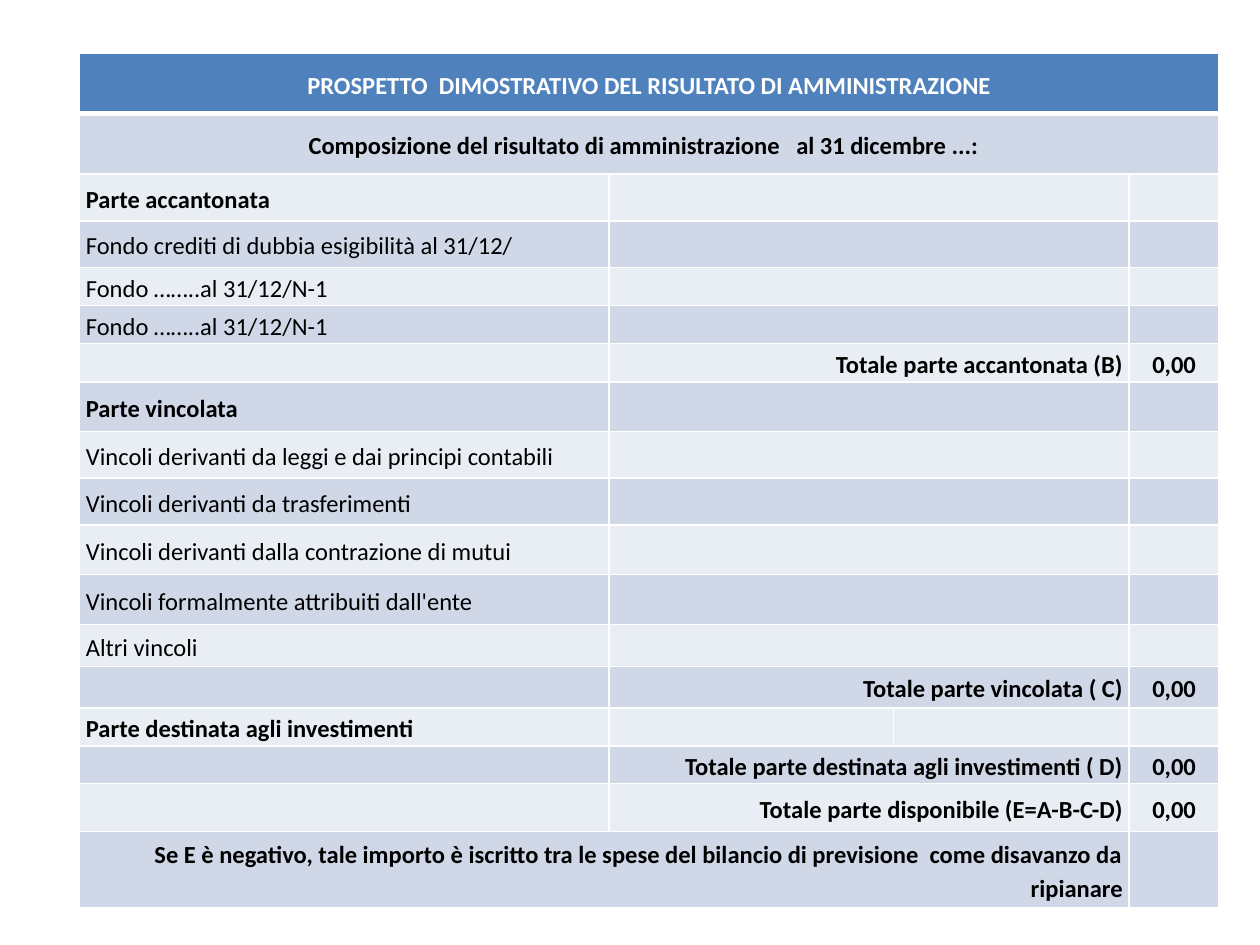
from lxml import etree
from pptx import Presentation
from pptx import util as u
from pptx.dml import color as c
from pptx.enum import text as t
from pptx.oxml import ns

HEADER, DARK, LIGHT, WHITE, BLACK = "4F81BD", "D0D8E8", "E9EDF4", "FFFFFF", "000000"
LEFT, CENTER, RIGHT = t.PP_ALIGN.LEFT, t.PP_ALIGN.CENTER, t.PP_ALIGN.RIGHT


def rgb(value):
    return c.RGBColor.from_string(value)


def add_border(cell, side, width):
    line = etree.SubElement(cell._tc.get_or_add_tcPr(), ns.qn(f"a:ln{side}"), w=str(u.Pt(width)))
    fill = etree.SubElement(line, ns.qn("a:solidFill"))
    etree.SubElement(fill, ns.qn("a:srgbClr"), val=WHITE)


presentation = Presentation()
presentation.slide_width, presentation.slide_height = u.Pt(720), u.Pt(540)
slide = presentation.slides.add_slide(presentation.slide_layouts[6])

# Each row: height, then (text, columns spanned, alignment, bold) per cell
blank = ("", 1, LEFT, False)
wide_blank = ("", 2, LEFT, False)


def item(height, label, bold=False):
    return height, [(label, 1, LEFT, bold), wide_blank, blank]


totals = {
    "B": (22, "Totale parte accantonata (B)"),
    "C": (23.9, "Totale parte vincolata ( C)"),
    "D": (21.5, "Totale parte destinata agli investimenti ( D)"),
    "E": (27.4, "Totale parte disponibile (E=A-B-C-D)"),
}
total = {
    key: (height, [blank, (label, 2, RIGHT, True), ("0,00", 1, CENTER, True)])
    for key, (height, label) in totals.items()
}
rows = [
    (34.5, [("PROSPETTO  DIMOSTRATIVO DEL RISULTATO DI AMMINISTRAZIONE", 4, CENTER, True)]),
    (34.5, [("Composizione del risultato di amministrazione   al 31 dicembre ...:  ", 4, CENTER, True)]),
    item(26.7, "Parte accantonata", True),
    item(26.7, "Fondo crediti di dubbia esigibilità al 31/12/"),
    item(21.7, "Fondo ……..al 31/12/N-1"),
    item(21.7, "Fondo ……..al 31/12/N-1"),
    total["B"],
    item(28.4, "Parte vincolata", True),
    item(26.7, "Vincoli derivanti da leggi e dai principi contabili"),
    item(26.9, "Vincoli derivanti da trasferimenti"),
    item(28.3, "Vincoli derivanti dalla contrazione di mutui"),
    item(28.4, "Vincoli formalmente attribuiti dall'ente"),
    item(24, "Altri vincoli"),
    total["C"],
    (21.5, [("Parte destinata agli investimenti", 1, LEFT, True), blank, blank, blank]),
    total["D"],
    total["E"],
    (43.7, [("Se E è negativo, tale importo è iscritto tra le spese del bilancio di previsione  "
             "come disavanzo da ripianare", 3, RIGHT, True), blank]),
]

# Table frame
column_widths = [302.4, 162.6, 134.8, 51.4]
shape = slide.shapes.add_table(
    len(rows), len(column_widths), u.Pt(45.5), u.Pt(30.5),
    u.Pt(sum(column_widths)), u.Pt(sum(height for height, cells in rows)))
table = shape.table
for column, width in zip(table.columns, column_widths):
    column.width = u.Pt(width)

# Fills, borders and insets of every grid cell
for row_index, (height, cells) in enumerate(rows):
    table.rows[row_index].height = u.Pt(height)
    row_fill = HEADER if row_index == 0 else DARK if row_index % 2 else LIGHT
    for cell in table.rows[row_index].cells:
        cell.margin_left = cell.margin_right = u.Pt(3.6)
        cell.margin_top = cell.margin_bottom = 0
        cell.vertical_anchor = t.MSO_ANCHOR.MIDDLE
        for side in "LRTB":
            under_header = (row_index, side) in [(0, "B"), (1, "T")]
            add_border(cell, side, 3 if under_header else 1)
        cell.fill.solid()
        cell.fill.fore_color.rgb = rgb(row_fill)
        # Keeps empty cells from stretching their row
        etree.SubElement(cell.text_frame.paragraphs[0]._p, ns.qn("a:endParaRPr"), sz="1400")

    # Merged cells and text
    column_index = 0
    for label, span, alignment, bold in cells:
        cell = table.cell(row_index, column_index)
        if span > 1:
            cell.merge(table.cell(row_index, column_index + span - 1))
        column_index += span
        if not label:
            continue
        paragraph = cell.text_frame.paragraphs[0]
        paragraph.alignment = alignment
        paragraph.line_spacing = 1.15
        run = paragraph.add_run()
        run.text = label
        run.font.name = "Calibri"
        run.font.size = u.Pt(14)
        run.font.bold = bold
        run.font.color.rgb = rgb(WHITE if row_index == 0 else BLACK)

presentation.save("out.pptx")
